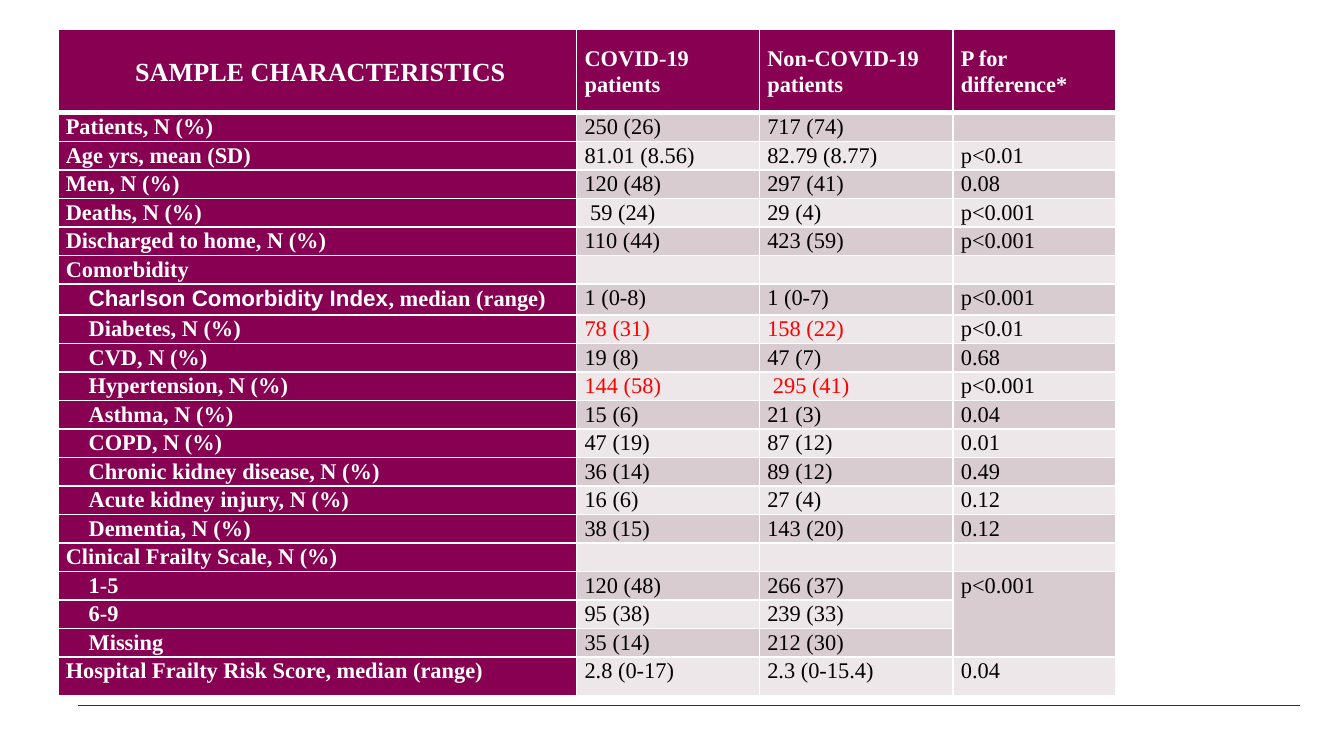
from dataclasses import dataclass

import lxml.etree as etree
import pptx
import pptx.dml.color
import pptx.enum.shapes
import pptx.enum.text
import pptx.oxml.ns
import pptx.slide
import pptx.table
import pptx.util

Inches = pptx.util.Inches
Pt = pptx.util.Pt
qn = pptx.oxml.ns.qn

HUES = {"plum": "870052", "white": "FFFFFF", "black": "000000",
        "red": "FF0000", "dark": "D9CCD1", "light": "EDE7E9"}
SERIF, SANS = "Times New Roman", "Arial"

# Slide and table measures in inches
WIDE = 10
LEFT, TOP, HIGH = 0.43, 0.22, 4.96
COLS = [3.86, 1.36, 1.44, 1.21]
HEAD, INDEX, LAST = 0.62, 0.23, 0.29
PAD, INDENT = 0.06, 0.17


@dataclass
class Row:
    label: str
    covid: str = ""
    other: str = ""
    p: str = ""
    sub: bool = False
    hot: bool = False
    sans: str = ""  # opening words of the label set in the sans font


@dataclass
class Style:
    hue: str
    bold: bool = False
    size: float = 12
    font: str = SERIF


TITLES = [" SAMPLE CHARACTERISTICS", "COVID-19 patients",
          "Non-COVID-19 patients", "P for difference*"]
ROWS = [
    Row("Patients, N (%)", "250 (26)", "717 (74)"),
    Row("Age yrs, mean (SD)", "81.01 (8.56)", "82.79 (8.77)", "p<0.01"),
    Row("Men, N (%)", "120 (48)", "297 (41)", "0.08"),
    Row("Deaths, N (%)", " 59 (24)", "29 (4)", "p<0.001"),
    Row("Discharged to home, N (%)", "110 (44)", "423 (59)", "p<0.001"),
    Row("Comorbidity"),
    Row(", median (range)", "1 (0-8)", "1 (0-7)", "p<0.001", sub=True,
        sans="Charlson Comorbidity Index"),
    Row("Diabetes, N (%)", "78 (31)", "158 (22)", "p<0.01", sub=True, hot=True),
    Row("CVD, N (%)", "19 (8)", "47 (7)", "0.68", sub=True),
    Row("Hypertension, N (%)", "144 (58)", " 295 (41)", "p<0.001", sub=True, hot=True),
    Row("Asthma, N (%)", "15 (6)", "21 (3)", "0.04", sub=True),
    Row("COPD, N (%)", "47 (19)", "87 (12)", "0.01", sub=True),
    Row("Chronic kidney disease, N (%)", "36 (14)", "89 (12)", "0.49", sub=True),
    Row("Acute kidney injury, N (%)", "16 (6)", "27 (4)", "0.12", sub=True),
    Row("Dementia, N (%)", "38 (15)", "143 (20)", "0.12", sub=True),
    Row("Clinical Frailty Scale, N (%)"),
    Row("1-5", "120 (48)", "266 (37)", "p<0.001", sub=True),
    Row("6-9", "95 (38)", "239 (33)", sub=True),
    Row("Missing", "35 (14)", "212 (30)", sub=True),
    Row("Hospital Frailty Risk Score, median (range)", "2.8 (0-17)",
        "2.3 (0-15.4)", "0.04"),
]
SPAN = (17, 19)  # table rows that share one p value


def tint(name: str) -> pptx.dml.color.RGBColor:
    return pptx.dml.color.RGBColor.from_string(HUES[name])


def edge(cell: pptx.table._Cell, top: float, base: float) -> None:
    """Put white borders on the four sides of a cell."""
    props = cell._tc.get_or_add_tcPr()
    for side, width in {"L": 1, "R": 1, "T": top, "B": base}.items():
        line = etree.SubElement(props, qn(f"a:ln{side}"), w=str(Pt(width)))
        fill = etree.SubElement(line, qn("a:solidFill"))
        etree.SubElement(fill, qn("a:srgbClr"), val=HUES["white"])


def paint(cell: pptx.table._Cell, fill: str, row: int, sub: bool = False) -> None:
    """Set the borders, fill and margins of a cell."""
    edge(cell, 3 if row == 1 else 1, 3 if row == 0 else 1)
    cell.fill.solid()
    cell.fill.fore_color.rgb = tint(fill)
    margins = {"margin_left": PAD + INDENT * sub, "margin_right": PAD,
               "margin_top": 0, "margin_bottom": 0}
    for name, value in margins.items():
        setattr(cell, name, Inches(value))


def write(cell: pptx.table._Cell, text: str, style: Style) -> None:
    """Add a run of text, or size the line of an empty cell."""
    para = cell.text_frame.paragraphs[0]
    para.line_spacing = 1.07
    if not text:
        etree.SubElement(para._p, qn("a:endParaRPr"), sz=str(int(style.size * 100)))
        return
    run = para.add_run()
    run.text = text
    looks = {"name": style.font, "size": Pt(style.size), "bold": style.bold}
    for name, value in looks.items():
        setattr(run.font, name, value)
    run.font.color.rgb = tint(style.hue)


def draw_head(grid: pptx.table.Table) -> None:
    for col, text in enumerate(TITLES):
        cell = grid.cell(0, col)
        paint(cell, "plum", 0)
        cell.vertical_anchor = pptx.enum.text.MSO_ANCHOR.MIDDLE
        write(cell, text, Style("white", True, 12 if col else 14))
    grid.cell(0, 0).text_frame.paragraphs[0].alignment = pptx.enum.text.PP_ALIGN.CENTER


def draw_row(grid: pptx.table.Table, num: int, row: Row) -> None:
    label = grid.cell(num, 0)
    paint(label, "plum", num, row.sub)
    if row.sans:
        write(label, row.sans, Style("white", True, font=SANS))
    write(label, row.label, Style("white", True))
    hue = "red" if row.hot else "black"
    values = [(row.covid, hue), (row.other, hue), (row.p, "black")]
    for col, (text, ink) in enumerate(values, 1):
        cell = grid.cell(num, col)
        paint(cell, "dark" if num % 2 else "light", num)
        write(cell, text, Style(ink))


def draw_rule(slide: pptx.slide.Slide) -> None:
    rule = slide.shapes.add_connector(
        pptx.enum.shapes.MSO_CONNECTOR.STRAIGHT,
        Inches(0.58), Inches(5.25), Inches(9.67), Inches(5.25))
    rule.line.color.rgb = tint("plum")
    rule.line.width = Pt(0.75)
    etree.SubElement(rule._element.spPr, qn("a:effectLst"))


def draw_table(slide: pptx.slide.Slide) -> None:
    grid = slide.shapes.add_table(
        len(ROWS) + 1, len(COLS), Inches(LEFT), Inches(TOP),
        Inches(sum(COLS)), Inches(HIGH)).table
    for col, width in zip(grid.columns, COLS):
        col.width = Inches(width)

    # Plain rows share the height the three special rows leave
    step = (HIGH - HEAD - INDEX - LAST) / (len(ROWS) - 2)
    special = {0: HEAD, 7: INDEX, len(ROWS): LAST}
    for num, line in enumerate(grid.rows):
        line.height = Inches(special.get(num, step))

    draw_head(grid)
    for num, row in enumerate(ROWS, 1):
        draw_row(grid, num, row)
    first, last = SPAN
    grid.cell(first, 3).merge(grid.cell(last, 3))


def main() -> None:
    deck = pptx.Presentation()
    deck.slide_width, deck.slide_height = Inches(WIDE), Inches(WIDE * 9 / 16)
    slide = deck.slides.add_slide(deck.slide_layouts[6])
    draw_rule(slide)
    draw_table(slide)
    deck.save("out.pptx")


if __name__ == "__main__":
    main()
